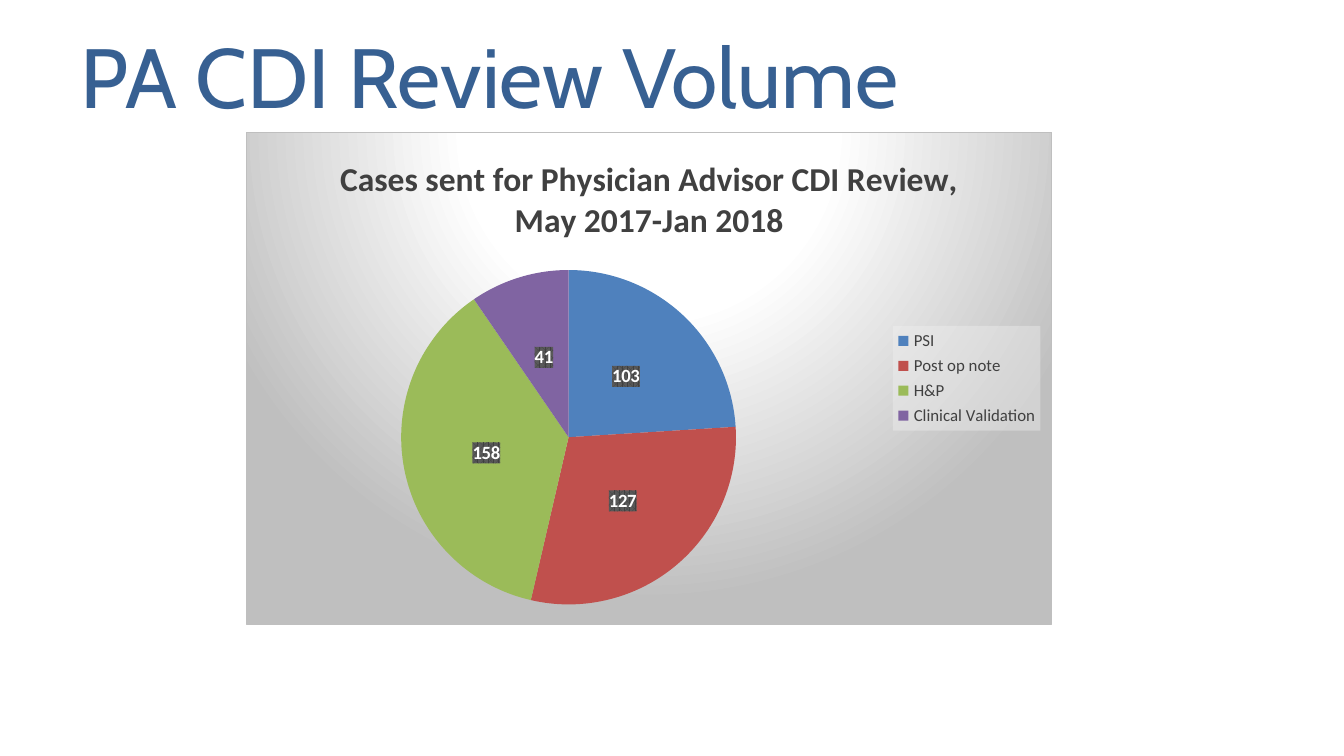
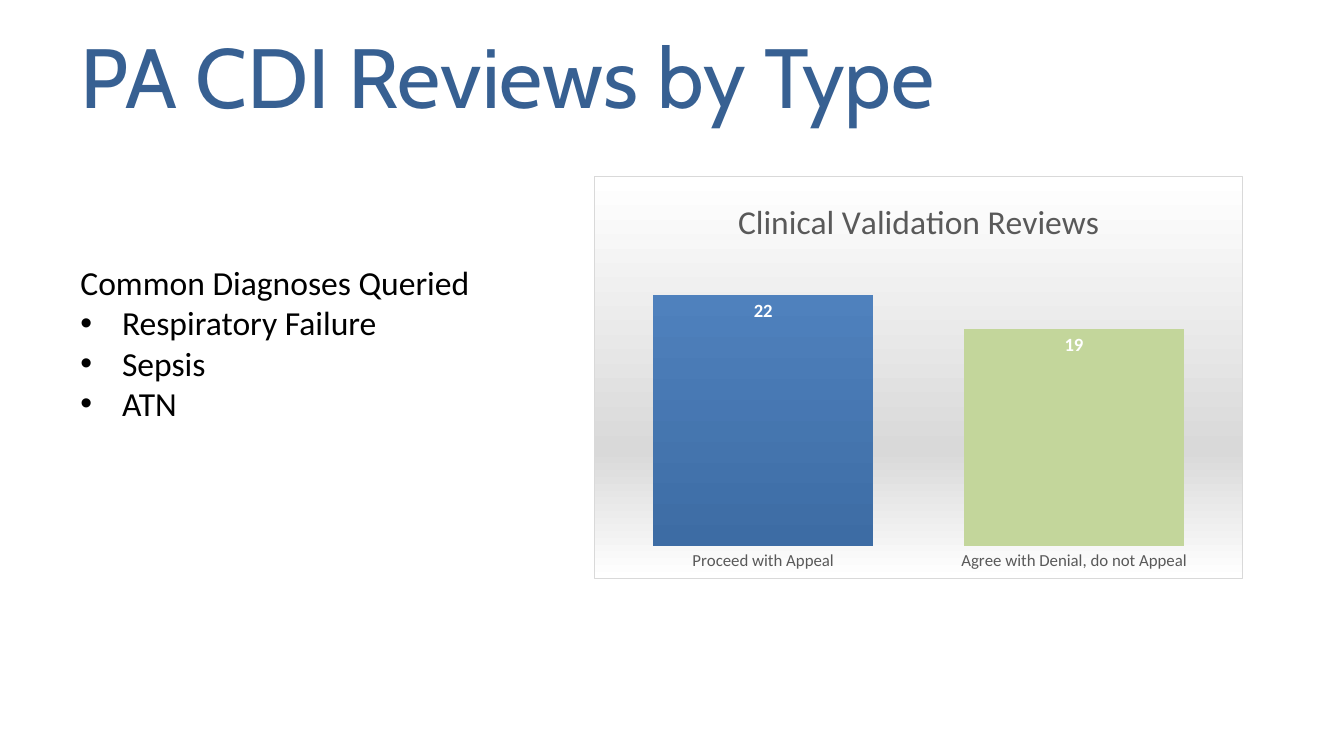
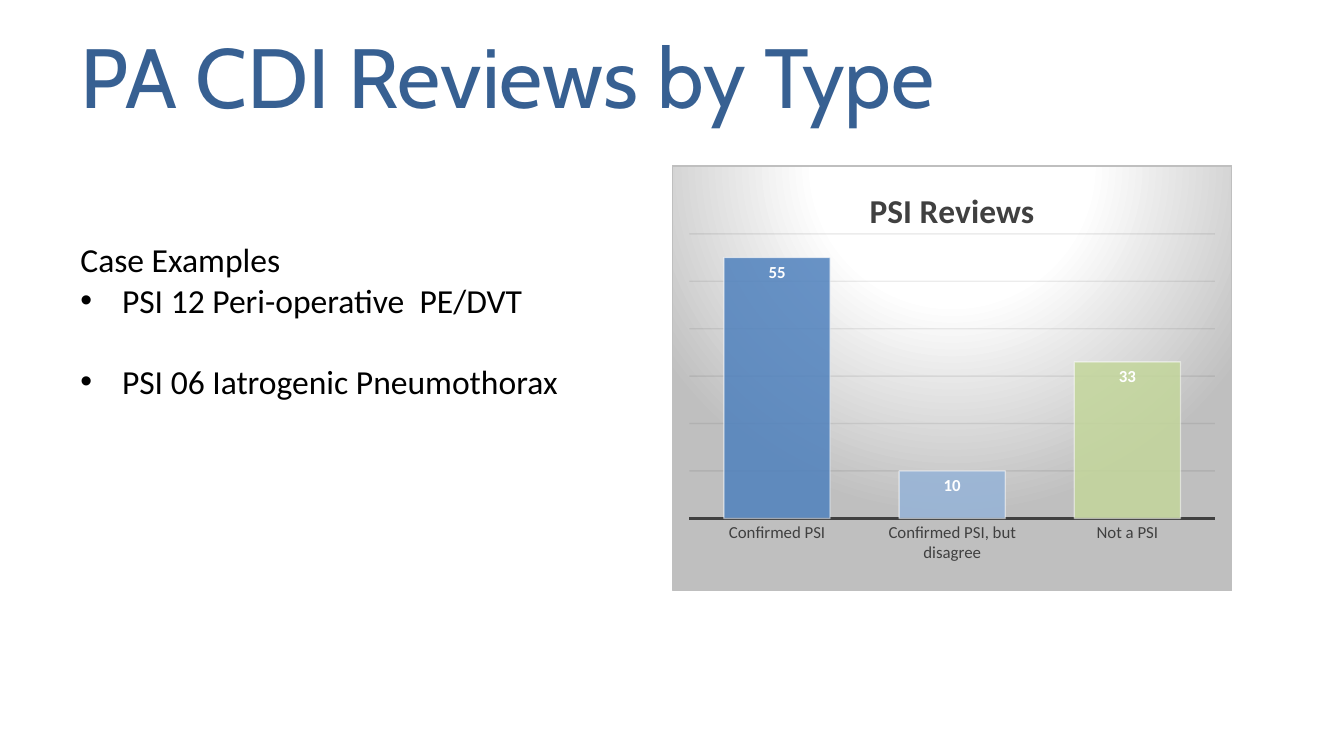
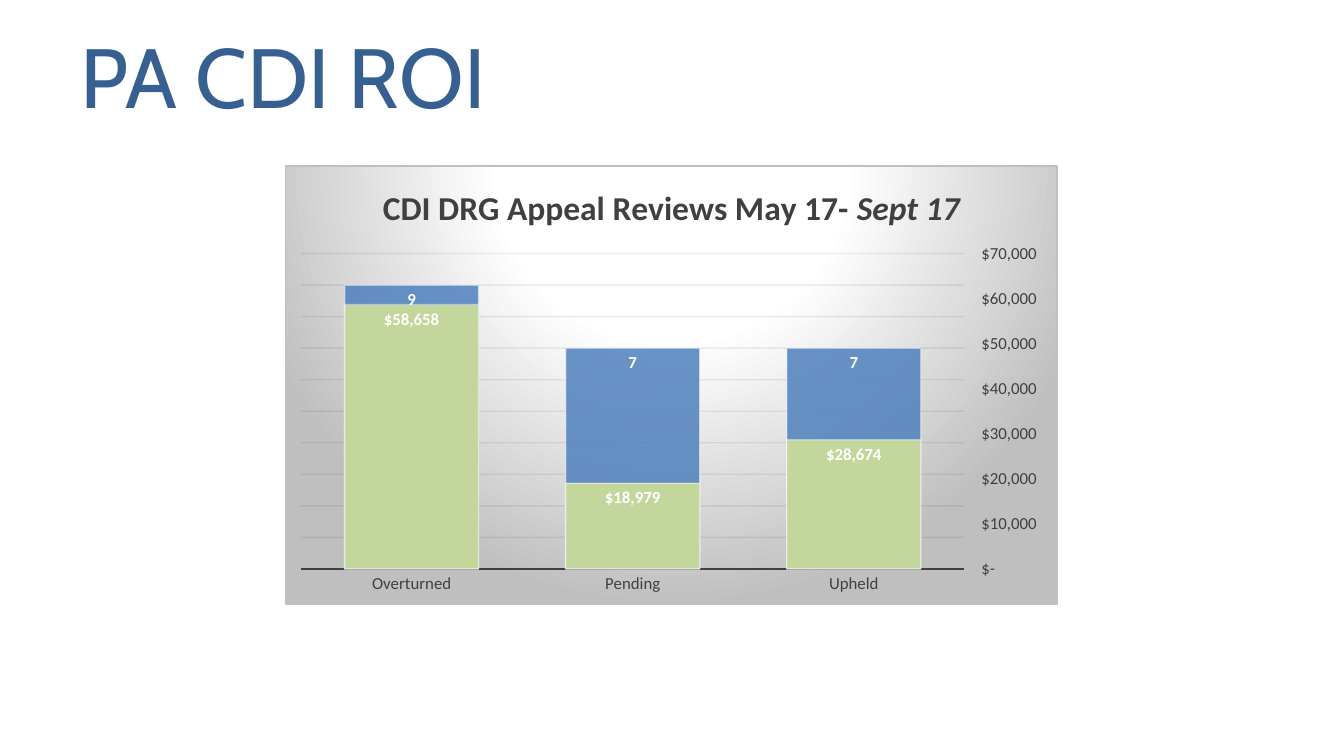
from copy import deepcopy

from pptx import Presentation
from pptx.chart.axis import ValueAxis
from pptx.chart.data import CategoryChartData
from pptx.dml.color import RGBColor
from pptx.dml.fill import FillFormat
from pptx.dml.line import LineFormat
from pptx.enum.chart import XL_CHART_TYPE, XL_LABEL_POSITION, XL_LEGEND_POSITION, XL_TICK_MARK
from pptx.enum.dml import MSO_PATTERN
from pptx.enum.text import MSO_ANCHOR
from pptx.oxml import parse_xml
from pptx.oxml.ns import nsdecls, qn
from pptx.util import Inches, Pt

BLUE, RED, GREEN, PURPLE = "4F81BD", "C0504D", "9BBB59", "8064A2"
PALE_BLUE, PALE_GREEN = "95B3D7", "C3D69B"
WHITE, DARK, GRAY = "FFFFFF", "404040", "595959"
TITLE_FONT = {"name": "Cabin", "size": Pt(45), "color": "376092"}
BODY_FONT = {"name": "Calibri", "size": Pt(18), "color": "000000"}
CHART_FONT = {"name": "Calibri", "size": Pt(10), "color": "000000"}
AXIS_FONT = {"name": "Calibri", "size": Pt(9), "bold": False, "color": DARK}
HEADING_FONT = {"name": "Calibri", "size": Pt(18), "bold": True, "color": DARK}
LABEL_FONT = {"name": "Calibri", "size": Pt(9), "bold": True, "color": WHITE}
RADIAL = ('<a:path path="circle"><a:fillToRect l="50000" t="-80000" r="50000" b="180000"/>'
          '</a:path>')
DOWNWARD = '<a:lin ang="5400000" scaled="0"/>'
SPOTLIGHT = ([(0, WHITE), (39, WHITE), (100, "BFBFBF")], RADIAL, "BFBFBF")
SHEEN = ([(0, WHITE), (68, "D9D9D9"), (100, WHITE)], DOWNWARD, "D9D9D9")
DOLLARS = '_("$"* #,##0_);_("$"* \\(#,##0\\);_("$"* "-"_);_(@_)'


def rgb(color):
    """Turn a hex string into a colour."""
    return RGBColor.from_string(color)


def style_font(font, values):
    """Apply a dict of format values to a font."""
    for name, value in values.items():
        if name == "color":
            font.color.rgb = rgb(value)
        else:
            setattr(font, name, value)


def paint(fill, color, alpha=100):
    """Make a fill solid, with an opacity in percent."""
    fill.solid()
    fill.fore_color.rgb = rgb(color)
    if alpha < 100:
        tone = fill._xPr.find(qn("a:solidFill"))[0]
        tone.append(parse_xml(f'<a:alpha {nsdecls("a")} val="{alpha * 1000}"/>'))


def shade(fill, stops, direction):
    """Make a fill a gradient with the given stops."""
    fill.solid()
    marks = "".join(f'<a:gs pos="{place * 1000}"><a:srgbClr val="{color}"/></a:gs>'
                    for place, color in stops)
    gradient = parse_xml(f'<a:gradFill {nsdecls("a")} rotWithShape="1">'
                         f'<a:gsLst>{marks}</a:gsLst>{direction}</a:gradFill>')
    fill._xPr.replace(fill._xPr.find(qn("a:solidFill")), gradient)


def add_properties(owner):
    """Give a chart part that has a text style its own shape properties."""
    properties = parse_xml(f'<c:spPr {nsdecls("c", "a")}/>')
    owner.find(qn("c:txPr")).addprevious(properties)
    return properties


def draw_line(line, color, width, alpha=100):
    """Set the colour and width of a line."""
    line.width = Pt(width)
    paint(line.fill, color, alpha)


def add_text(page, box, lines, font):
    """Place a text box of (text, bulleted, space before) lines."""
    frame = page.shapes.add_textbox(*map(Inches, box)).text_frame
    frame.word_wrap = True
    frame.vertical_anchor = MSO_ANCHOR.TOP
    for number, (text, bulleted, gap) in enumerate(lines):
        para = frame.add_paragraph() if number else frame.paragraphs[0]
        if bulleted:
            layout = para._p.get_or_add_pPr()
            layout.set("marL", str(Inches(0.31)))
            layout.set("indent", str(Inches(-0.31)))
            for mark in ('buFont {} typeface="Arial"', 'buChar {} char="•"'):
                layout.append(parse_xml(f'<a:{mark.format(nsdecls("a"))}/>'))
        if gap:
            para.space_before = Pt(gap)
        span = para.add_run()
        span.text = text
        style_font(span.font, font)
    return frame


def add_page(deck, title):
    """Add a blank page with the shared title."""
    page = deck.slides.add_slide(deck.slide_layouts[6])
    frame = add_text(page, (0.5, 0.12, 9, 0.71), [(title, False, 0)], TITLE_FONT)
    frame.margin_top = Inches(0.06)
    return page


def add_panel(page, box, kind, categories, rows, heading, backdrop, plot_box):
    """Place a chart with its heading, backdrop and plot area."""
    data = CategoryChartData()
    data.categories = categories
    for number, values in enumerate(rows, 1):
        data.add_series(f"Series {number}", values)
    chart = page.shapes.add_chart(kind, *map(Inches, box), data).chart
    style_font(chart.font, CHART_FONT)
    chart.has_legend = False

    chart.has_title = True
    chart.chart_title.include_in_layout = False
    para = chart.chart_title.text_frame.paragraphs[0]
    for text, changes in heading:
        span = para.add_run()
        span.text = text
        style_font(span.font, {**HEADING_FONT, **changes})

    stops, direction, border = backdrop
    properties = add_properties(chart.element)
    shade(FillFormat.from_fill_parent(properties), stops, direction)
    draw_line(LineFormat(properties), border, 0.75)
    if chart.element.find(qn("c:roundedCorners")) is None:
        corners = parse_xml(f'<c:roundedCorners {nsdecls("c")} val="0"/>')
        chart.element.find(qn("c:chart")).addprevious(corners)

    area = chart.element.find(".//" + qn("c:plotArea"))
    for layout in area.findall(qn("c:layout")):
        area.remove(layout)
    modes = '<c:layoutTarget val="inner"/><c:xMode val="edge"/><c:yMode val="edge"/>'
    sizes = "".join(f'<c:{name} val="{size}"/>' for name, size in zip("xywh", plot_box))
    area.insert(0, parse_xml(f'<c:layout {nsdecls("c")}><c:manualLayout>{modes}{sizes}'
                             '</c:manualLayout></c:layout>'))
    return chart


def label_series(series, position, font, number_format=None):
    """Show the values of a series."""
    labels = series.data_labels
    labels.show_value = True
    labels.position = position
    style_font(labels.font, font)
    if number_format:
        labels.number_format = number_format
        labels.number_format_is_linked = False
    return labels


def style_columns(chart, gap, top, unit, axis_color, ruled):
    """Style the axes and gap of a column chart."""
    chart.plots[0].gap_width = gap
    chart.plots[0].vary_by_categories = False
    for series in chart.plots[0].series:
        series.invert_if_negative = False
    base, scale = chart.category_axis, chart.value_axis
    base.major_tick_mark = base.minor_tick_mark = XL_TICK_MARK.NONE
    style_font(base.tick_labels.font, {**AXIS_FONT, "color": axis_color})
    scale.minimum_scale, scale.maximum_scale, scale.major_unit = 0, top, unit
    scale.visible = False
    scale.has_major_gridlines = ruled
    if ruled:
        draw_line(base.format.line, DARK, 1.5)
        draw_line(scale.major_gridlines.format.line, "0D0D0D", 0.75, 7)
    else:
        base.format.line.fill.background()


def style_bar(part, color, alpha):
    """Fill a series or point and outline it in translucent white."""
    paint(part.format.fill, color, alpha)
    draw_line(part.format.line, WHITE, 0.75, 50)


def move_to_right_axis(chart, top, unit):
    """Put the second series on its own axis at the right."""
    columns = chart.element.find(".//" + qn("c:barChart"))
    twin = deepcopy(columns)
    columns.remove(columns.findall(qn("c:ser"))[1])
    twin.remove(twin.findall(qn("c:ser"))[0])
    columns.addnext(twin)
    area = columns.getparent()
    base, scale = (deepcopy(area.find(qn(name))) for name in ("c:catAx", "c:valAx"))
    area.find(qn("c:valAx")).addnext(scale)
    scale.addnext(base)
    for part in (twin, base, scale):
        for link in part.iter(qn("c:axId"), qn("c:crossAx")):
            link.set("val", str(int(link.get("val")) + 1))
    base.find(qn("c:delete")).set("val", "1")
    scale.find(qn("c:axPos")).set("val", "r")
    scale.find(qn("c:crosses")).set("val", "max")

    right = ValueAxis(scale)
    right.visible = True
    right.has_major_gridlines = False
    right.maximum_scale, right.major_unit = top, unit
    right.major_tick_mark = XL_TICK_MARK.OUTSIDE
    right.format.line.fill.background()
    right.tick_labels.number_format = DOLLARS
    right.tick_labels.number_format_is_linked = False
    style_font(right.tick_labels.font, AXIS_FONT)


def volume_page(deck):
    """Build the page with the pie of review volume."""
    page = add_page(deck, "PA CDI Review Volume")
    chart = add_panel(
        page, (1.83, 0.98, 6, 3.67), XL_CHART_TYPE.PIE,
        ["PSI", "Post op note", "H&P", "Clinical Validation"], [(103, 127, 158, 41)],
        [("Cases sent for Physician Advisor CDI Review, May 2017-Jan 2018", {})],
        SPOTLIGHT, (0.19, 0.28, 0.42, 0.68))
    chart.plots[0].vary_by_categories = True
    series = chart.plots[0].series[0]
    for number, color in enumerate((BLUE, RED, GREEN, PURPLE)):
        paint(series.points[number].format.fill, color)
    labels = label_series(series, XL_LABEL_POSITION.CENTER, {**LABEL_FONT, "size": Pt(10)})
    pattern = FillFormat.from_fill_parent(add_properties(labels._element))
    pattern.patterned()
    pattern.pattern = MSO_PATTERN.PERCENT_75
    pattern.fore_color.rgb, pattern.back_color.rgb = rgb(DARK), rgb(GRAY)

    chart.has_legend = True
    chart.legend.position = XL_LEGEND_POSITION.RIGHT
    chart.legend.include_in_layout = False
    style_font(chart.legend.font, AXIS_FONT)
    paint(FillFormat.from_fill_parent(add_properties(chart.legend._element)), "F2F2F2", 39)


def validation_page(deck):
    """Build the page on clinical validation reviews."""
    page = add_page(deck, "PA CDI Reviews by Type")
    chart = add_panel(
        page, (4.42, 1.31, 4.83, 3), XL_CHART_TYPE.COLUMN_CLUSTERED,
        ["Proceed with Appeal", "Agree with Denial, do not Appeal"], [(22, 19)],
        [("Clinical Validation Reviews", {"bold": False, "color": GRAY})],
        SHEEN, (0.02, 0.21, 0.96, 0.71))
    style_columns(chart, 41, 25, 5, GRAY, False)
    series = chart.plots[0].series[0]
    shade(series.format.fill, [(0, BLUE), (100, "3D6CA4")], DOWNWARD)
    paint(series.points[1].format.fill, PALE_GREEN)
    label_series(series, XL_LABEL_POSITION.INSIDE_END, {**LABEL_FONT, "size": Pt(10)})
    add_text(page, (0.5, 1.9, 3.33, 1.62),
             [("Common Diagnoses Queried", False, 0), ("Respiratory Failure", True, 0),
              ("Sepsis", True, 0), ("ATN", True, 0)], BODY_FONT)


def safety_page(deck):
    """Build the page on PSI reviews."""
    page = add_page(deck, "PA CDI Reviews by Type")
    chart = add_panel(
        page, (5, 1.23, 4.17, 3.17), XL_CHART_TYPE.COLUMN_CLUSTERED,
        ["Confirmed PSI", "Confirmed PSI, but disagree", "Not a PSI"], [(55, 10, 33)],
        [("PSI Reviews", {})], SPOTLIGHT, (0.03, 0.16, 0.94, 0.67))
    style_columns(chart, 65, 60, 10, DARK, True)
    series = chart.plots[0].series[0]
    style_bar(series, BLUE, 85)
    for number, color in enumerate((PALE_BLUE, PALE_GREEN), 1):
        style_bar(series.points[number], color, 85)
    label_series(series, XL_LABEL_POSITION.INSIDE_END, LABEL_FONT)
    add_text(page, (0.5, 1.73, 4, 1.62),
             [("Case Examples", False, 0), ("PSI 12 Peri-operative  PE/DVT", True, 0),
              ("PSI 06 Iatrogenic Pneumothorax", True, 22)], BODY_FONT)


def return_page(deck):
    """Build the page on appeal counts and dollars."""
    page = add_page(deck, "PA CDI ROI")
    chart = add_panel(
        page, (2.12, 1.23, 5.75, 3.27), XL_CHART_TYPE.COLUMN_CLUSTERED,
        ["Overturned", "Pending", "Upheld"], [(9, 7, 7), (58658, 18979, 28674)],
        [("CDI DRG Appeal Reviews May 17- ", {}), ("Sept 17", {"italic": True})],
        SPOTLIGHT, (0.02, 0.2, 0.86, 0.72))
    style_columns(chart, 65, 10, 1, DARK, True)
    looks = ((BLUE, 85, None), (PALE_GREEN, 100, DOLLARS))
    for series, (color, alpha, number_format) in zip(chart.plots[0].series, looks):
        style_bar(series, color, alpha)
        label_series(series, XL_LABEL_POSITION.INSIDE_END, LABEL_FONT, number_format)
    move_to_right_axis(chart, 70000, 10000)


def main():
    """Build and save the deck."""
    deck = Presentation()
    deck.slide_width = Inches(10)
    deck.slide_height = deck.slide_width * 9 // 16
    for build in (volume_page, validation_page, safety_page, return_page):
        build(deck)
    deck.save("out.pptx")


if __name__ == "__main__":
    main()
